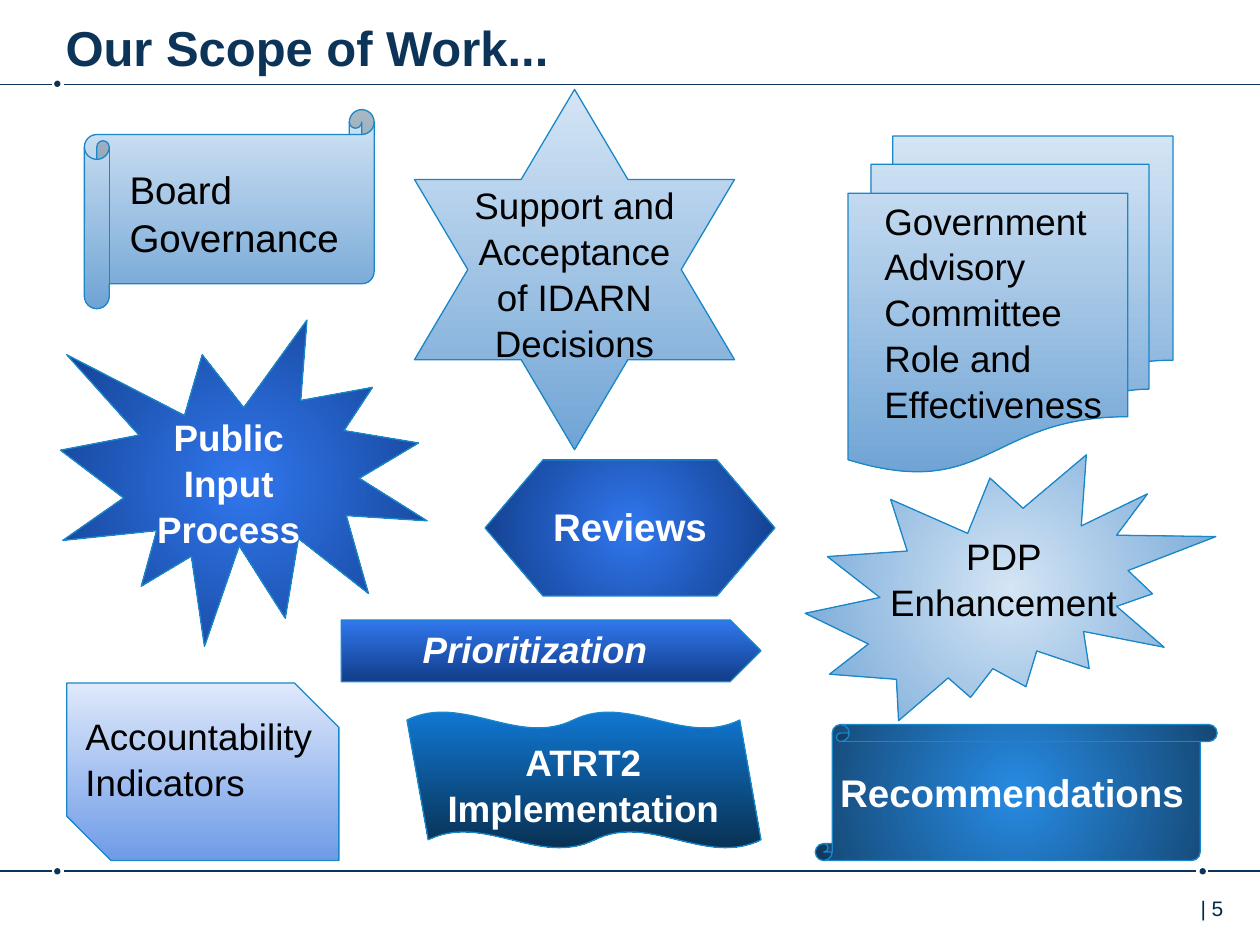
from lxml import etree
from pptx import Presentation
from pptx.dml.color import RGBColor
from pptx.enum.shapes import MSO_CONNECTOR, MSO_SHAPE as S
from pptx.enum.text import MSO_ANCHOR, PP_ALIGN
from pptx.oxml import parse_xml
from pptx.oxml.ns import qn
from pptx.util import Inches, Pt

LEFT, MID = PP_ALIGN.LEFT, PP_ALIGN.CENTER
TOP = MSO_ANCHOR.TOP
LINE = MSO_CONNECTOR.STRAIGHT
A_NS = "http://schemas.openxmlformats.org/drawingml/2006/main"
CIRCLE = (
    f'<a:path xmlns:a="{A_NS}" path="circle">'
    '<a:fillToRect l="50000" t="50000" r="50000" b="50000"/></a:path>'
)

THEME = {
    "font": "Arial",
    "navy": "0B3458", "page": "002B49", "edge": "1A87C9",
    "black": "000000", "white": "FFFFFF",
    "pale": ("D4E5F5", "70A4D5"), "royal": ("3177EE", "113D8A"),
    "ocean": ("1077D2", "093153"), "mist": ("DFE9FB", "6E9BE7"),
    "deep": ("278BE3", "154773"),
    "title": 28, "large": 22, "body": 21, "small": 12,
}


def color(name):
    return RGBColor.from_string(THEME[name])


def write(box, lines, size, ink, align=LEFT, inset=(0.1, 0.11), space=1.04, **style):
    item = slide.shapes.add_textbox(*map(Inches, box))
    frame = item.text_frame
    side, head = map(Inches, inset)
    form = {
        "word_wrap": True, "vertical_anchor": TOP,
        "margin_left": side, "margin_right": side,
        "margin_top": head, "margin_bottom": head,
    }
    for key, value in form.items():
        setattr(frame, key, value)
    frame.text = lines
    look = {"name": THEME["font"], "size": Pt(THEME[size]), **style}
    for para in frame.paragraphs:
        para.alignment = align
        para.line_spacing = space
        for key, value in look.items():
            setattr(para.font, key, value)
        para.font.color.rgb = color(ink)


deck = Presentation()
deck.slide_width, deck.slide_height = Inches(10), Inches(7.5)
slide = deck.slides.add_slide(deck.slide_layouts[6])

RULES = [(0, 0.41, 0.67), (0.51, 10, 0.67),
         (0, 0.41, 6.91), (0.51, 9.49, 6.91), (9.59, 10, 6.91)]
for start, end, y in RULES:
    rule = slide.shapes.add_connector(LINE, *map(Inches, (start, y, end, y)))
    rule.line.color.rgb = color("navy")
    rule.line.width = Pt(1)
    etree.SubElement(rule._element.spPr, qn("a:effectLst"))

for x, y in [(0.43, 0.64), (0.43, 6.89), (9.52, 6.89)]:
    dot = slide.shapes.add_shape(S.OVAL, *map(Inches, (x, y, 0.05, 0.05)))
    dot.shadow.inherit = False
    dot.fill.solid()
    dot.fill.fore_color.rgb = color("navy")
    dot.line.fill.background()

write((0.52, 0.09, 8.65, 0.49), "Our Scope of Work...", "title", "navy",
      inset=(0, 0.05), space=1, bold=True)
write((9.43, 7.06, 0.57, 0.4), "| 5", "small", "page", inset=(0.1, 0.05), space=1)

BOLD = {"bold": True}
TOPICS = [
    (S.HORIZONTAL_SCROLL, (0.67, 0.87, 2.3, 1.58), "pale", False,
     (0.93, 1.19, 2.03, 1), "Board Governance", "large", "black", LEFT, {}),
    (S.FLOWCHART_MULTIDOCUMENT, (6.73, 1.08, 2.58, 2.67), "pale", False,
     (6.92, 1.45, 2.25, 1.01),
     "Government Advisory Committee\nRole and Effectiveness", "body", "black", LEFT, {}),
    (S.STAR_6_POINT, (3.29, 0.71, 2.54, 2.86), "pale", False,
     (3.66, 1.33, 1.8, 1.23),
     "Support and Acceptance of IDARN Decisions", "body", "black", MID, {}),
    (S.EXPLOSION1, (0.48, 2.54, 2.91, 2.59), "royal", True,
     (1.09, 3.17, 1.45, 1.16), "Public Input Process", "body", "white", MID, BOLD),
    (S.EXPLOSION2, (6.39, 3.61, 3.26, 2.11), "pale", True,
     (6.91, 4.11, 2.11, 1.35), "PDP Enhancement", "body", "black", MID, {}),
    (S.DOUBLE_WAVE, (3.23, 5.65, 2.81, 1.08), "ocean", False,
     (3.38, 5.75, 2.5, 0.74), "ATRT2 Implementation", "body", "white", MID, BOLD),
    (S.PENTAGON, (2.71, 4.92, 3.33, 0.49), "royal", False,
     (2.69, 4.85, 3.11, 0.49), "Prioritization", "body", "white", MID,
     {**BOLD, "italic": True}),
    (S.FLOWCHART_PREPARATION, (3.85, 3.65, 2.3, 1.08), "royal", True,
     (4.12, 3.87, 1.76, 0.56), "Reviews", "large", "white", MID, BOLD),
    (S.SNIP_2_DIAG_RECTANGLE, (0.53, 5.42, 2.16, 1.41), "mist", False,
     (0.58, 5.54, 2.03, 1.08), "Accountability Indicators", "body", "black", LEFT, {}),
    (S.VERTICAL_SCROLL, (6.47, 5.75, 3.19, 1.08), "deep", True,
     (6.57, 5.98, 3, 0.74), "Recommendations", "large", "white", LEFT, BOLD),
]
ADJUST = {S.DOUBLE_WAVE: (0.06, 0.03), S.SNIP_2_DIAG_RECTANGLE: (0, 0.25)}

for kind, area, tint, round_fill, box, words, size, ink, align, style in TOPICS:
    shape = slide.shapes.add_shape(kind, *map(Inches, area))
    shape.shadow.inherit = False
    for index, value in enumerate(ADJUST.get(kind, ())):
        shape.adjustments[index] = value
    shape.fill.gradient()
    shape.fill.gradient_angle = 270
    for stop, code in zip(shape.fill.gradient_stops, THEME[tint]):
        stop.color.rgb = RGBColor.from_string(code)
    if round_fill:
        ramp = shape._element.spPr.find(qn("a:gradFill"))
        ramp.replace(ramp.find(qn("a:lin")), parse_xml(CIRCLE))
    shape.line.color.rgb = color("edge")
    shape.line.width = Pt(0.75)
    write(box, words, size, ink, align, **style)

deck.save("out.pptx")
